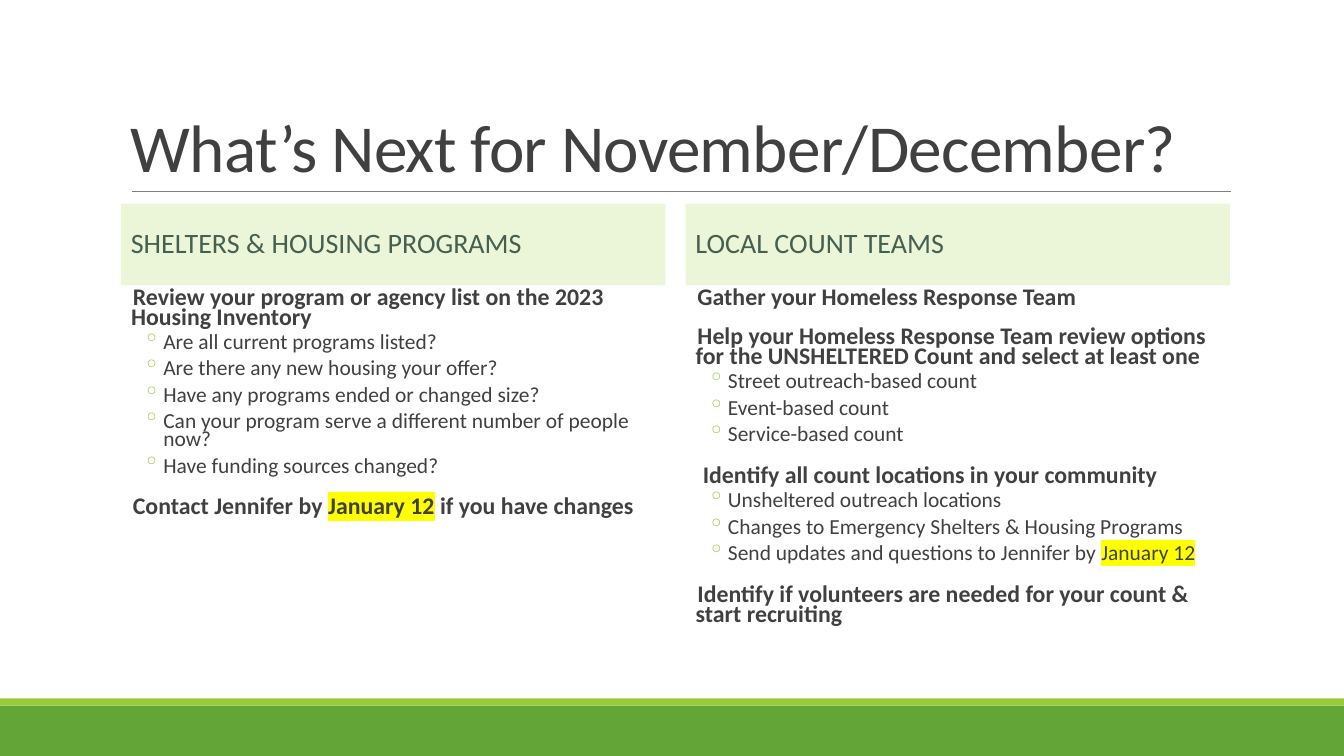
from lxml import etree
from pptx import Presentation
from pptx.dml.color import RGBColor
from pptx.enum.shapes import MSO_CONNECTOR, MSO_SHAPE
from pptx.enum.text import MSO_ANCHOR, PP_ALIGN
from pptx.oxml.ns import qn
from pptx.util import Inches, Pt

RECT = MSO_SHAPE.RECTANGLE
STRAIGHT = MSO_CONNECTOR.STRAIGHT
TOP, MIDDLE, BOTTOM = MSO_ANCHOR.TOP, MSO_ANCHOR.MIDDLE, MSO_ANCHOR.BOTTOM
LEFT = PP_ALIGN.LEFT

GREEN = RGBColor(0x63, 0xA5, 0x37)
LIME = RGBColor(0x99, 0xCB, 0x38)
PALE = RGBColor(0xEB, 0xF5, 0xD7)
TEAL = RGBColor(0x45, 0x5F, 0x51)
DARK = RGBColor(0x40, 0x40, 0x40)
GRAY = RGBColor(0x80, 0x80, 0x80)
YELLOW = RGBColor(0xFF, 0xFF, 0x00)

DEADLINE = "January 12"
COLUMNS = [
    ("SHELTERS & HOUSING PROGRAMS", [
        (0, ["Review your program or agency list on the 2023 Housing Inventory"]),
        (1, ["Are all current programs listed?"]),
        (1, ["Are there any new housing your offer?"]),
        (1, ["Have any programs ended or changed size?"]),
        (1, ["Can your program serve a different number of people now?"]),
        (1, ["Have funding sources changed?"]),
        (0, ["Contact Jennifer by ", DEADLINE, " if you have changes"]),
    ]),
    ("LOCAL COUNT TEAMS", [
        (0, ["Gather your Homeless Response Team"]),
        (0, ["Help your Homeless Response Team review options for the "
             "UNSHELTERED Count and select at least one"]),
        (1, ["Street outreach-based count"]),
        (1, ["Event-based count"]),
        (1, ["Service-based count"]),
        (0, [" ", "Identify all count locations in your community"]),
        (1, ["Unsheltered outreach locations"]),
        (1, ["Changes to Emergency Shelters & Housing Programs"]),
        (1, ["Send updates and questions to Jennifer by ", DEADLINE]),
        (0, ["Identify if volunteers are needed for your count & start recruiting"]),
    ]),
]


class SlideBuilder:
    font = "Calibri"

    def __init__(self, slide):
        self.slide = slide

    def rect(self, x, y, w, h, color):
        sp = self.slide.shapes.add_shape(
            RECT, Inches(x), Inches(y), Inches(w), Inches(h))
        sp.shadow.inherit = False
        sp.fill.solid()
        sp.fill.fore_color.rgb = color
        sp.line.fill.background()
        return sp

    def line(self, x1, x2, y):
        cxn = self.slide.shapes.add_connector(
            STRAIGHT, Inches(x1), Inches(y), Inches(x2), Inches(y))
        cxn.line.color.rgb = GRAY
        cxn.line.width = Pt(0.5)
        etree.SubElement(cxn._element.spPr, qn("a:effectLst"))

    def textbox(self, x, y, w, h):
        return self.slide.shapes.add_textbox(
            Inches(x), Inches(y), Inches(w), Inches(h))

    def frame(self, sp, anchor):
        tf = sp.text_frame
        tf.word_wrap = True
        tf.vertical_anchor = anchor
        return tf

    def spacing(self, p, line, before, after):
        p.alignment = LEFT
        p.line_spacing = line
        p.space_before = Pt(before)
        p.space_after = Pt(after)

    def run(self, p, text, size, color, bold=False):
        r = p.add_run()
        r.text = text
        r.font.size = Pt(size)
        r.font.bold = bold
        r.font.color.rgb = color
        r.font.name = self.font
        return r

    def highlight(self, r):
        rPr = r.font._element
        hl = etree.Element(qn("a:highlight"))
        etree.SubElement(hl, qn("a:srgbClr"), val=str(YELLOW))
        rPr.find(qn("a:latin")).addprevious(hl)

    def bullet(self, p, char, margin, hang):
        pPr = p._p.get_or_add_pPr()
        pPr.set("marL", str(Inches(margin)))
        pPr.set("indent", str(-Inches(hang)))
        clr = etree.SubElement(pPr, qn("a:buClr"))
        etree.SubElement(clr, qn("a:srgbClr"), val=str(LIME))
        etree.SubElement(pPr, qn("a:buChar"), char=char)

    def title(self, text):
        tf = self.frame(self.textbox(1.2, 0.31, 11, 1.59), BOTTOM)
        p = tf.paragraphs[0]
        self.spacing(p, 0.85, 0, 0)
        r = self.run(p, text, 48, DARK)
        r.font._element.set("spc", "-50")

    def heading(self, x, text):
        tf = self.frame(self.rect(x, 2.02, 5.4, 0.81, PALE), MIDDLE)
        p = tf.paragraphs[0]
        self.spacing(p, 0.9, 12, 2)
        self.run(p, text, 20, TEAL)

    def outline(self, x, items):
        tf = self.frame(self.textbox(x, 2.82, 5.4, 3.69), TOP)
        tf.margin_left = tf.margin_right = 0
        for i, (level, parts) in enumerate(items):
            p = tf.add_paragraph() if i else tf.paragraphs[0]
            p.level = level
            if level:
                self.spacing(p, 0.7, 2, 4)
                self.bullet(p, "◦", 0.42, 0.2)
            else:
                self.spacing(p, 0.7, 12, 2)
                self.bullet(p, " ", 0.1, 0.1)
            for part in parts:
                bold = level == 0 and part != " "
                r = self.run(p, part, 15.3 if level else 17, DARK, bold)
                if part == DEADLINE:
                    self.highlight(r)


def main():
    prs = Presentation()
    prs.slide_width = Inches(13.33)
    prs.slide_height = Inches(7.5)
    s = SlideBuilder(prs.slides.add_slide(prs.slide_layouts[6]))
    s.rect(0, 7, 13.33, 0.5, GREEN)
    s.rect(0, 6.93, 13.33, 0.07, LIME)
    s.line(1.31, 12.21, 1.9)
    s.title("What’s Next for November/December?")
    for i, (heading, items) in enumerate(COLUMNS):
        x = 1.2 + 5.6 * i
        s.heading(x, heading)
        s.outline(x, items)
    prs.save("out.pptx")


if __name__ == "__main__":
    main()
